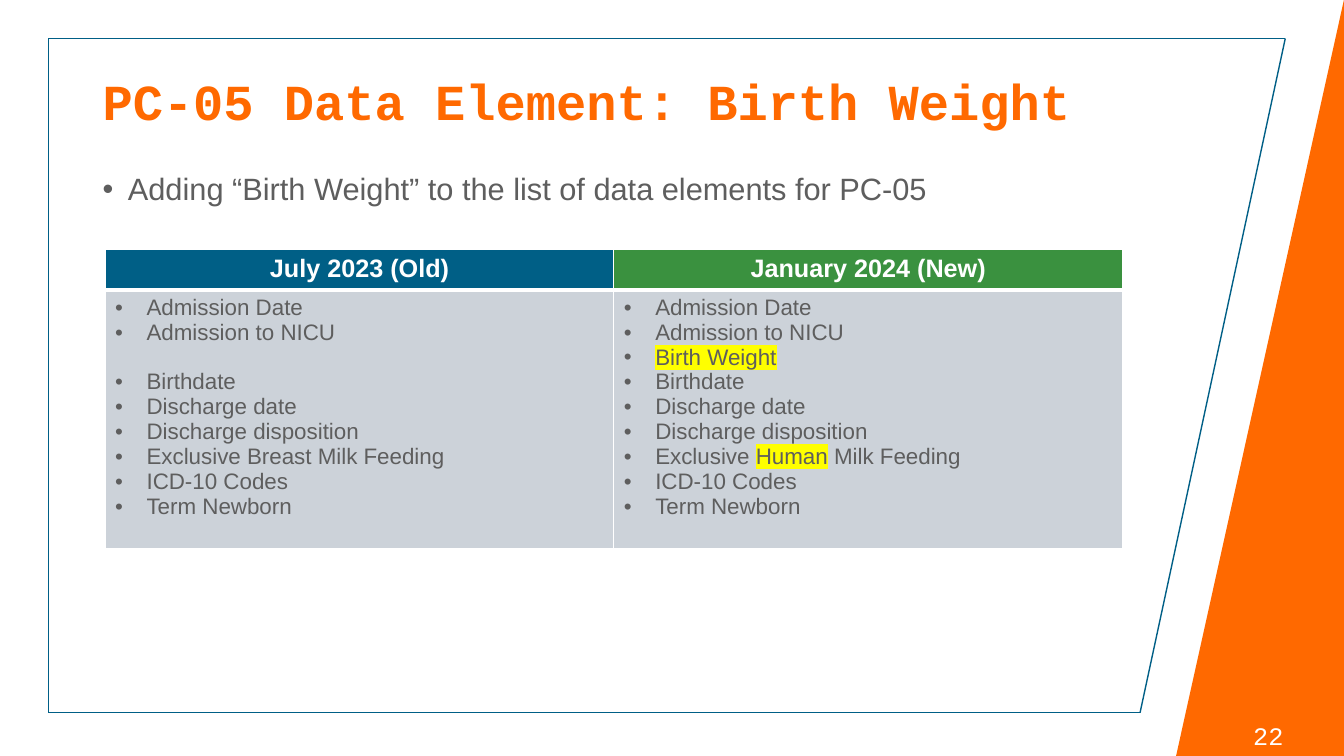
"""Build the slide that compares the PC-05 data elements before and after the change."""
import pptx
import pptx.dml.color
import pptx.enum.shapes
import pptx.enum.text
import pptx.oxml
import pptx.oxml.ns
import pptx.util

Cm = pptx.util.Cm
Pt = pptx.util.Pt
Align = pptx.enum.text.PP_ALIGN
Anchor = pptx.enum.text.MSO_ANCHOR


def rgb(value):
    return pptx.dml.color.RGBColor.from_string(value)


def element(markup):
    declaration = pptx.oxml.ns.nsdecls("a")
    tag, rest = markup.split(">", 1)
    return pptx.oxml.parse_xml(f"{tag} {declaration}>{rest}")


class DataElementSlide:
    orange, blue, green = "FF6900", "005F86", "3A913F"
    grey, pale, white, yellow = "5E5E5E", "CCD2D9", "FFFFFF", "FFFF00"
    sans, mono = "Arial", "Courier New"

    def __init__(self, deck):
        self.slide = deck.slides.add_slide(deck.slide_layouts[1])

    def format_runs(self, paragraph, font, size, color, bold=False):
        for run in paragraph.runs:
            run.font.name = font
            run.font.size = Pt(size)
            run.font.bold = bold
            run.font.color.rgb = rgb(color)

    def bullet(self, paragraph, indent):
        properties = paragraph._p.get_or_add_pPr()
        properties.set("marL", str(Cm(indent)))
        properties.set("indent", str(-Cm(indent)))
        properties.append(element('<a:buFont typeface="Arial"></a:buFont>'))
        properties.append(element('<a:buChar char="•"></a:buChar>'))

    def placeholder(self, holder, text, left, top, width, height, anchor):
        holder.left, holder.top = Cm(left), Cm(top)
        holder.width, holder.height = Cm(width), Cm(height)
        frame = holder.text_frame
        frame.text = text
        frame.vertical_anchor = anchor
        frame.auto_size = pptx.enum.text.MSO_AUTO_SIZE.NONE
        paragraph = frame.paragraphs[0]
        paragraph.alignment = Align.LEFT
        paragraph.line_spacing = 0.9
        paragraph.space_before = Pt(0)
        return paragraph

    def title(self, text):
        heading = self.placeholder(self.slide.shapes.title, text, 2.33, 1.01, 29.21, 3.25, Anchor.MIDDLE)
        self.format_runs(heading, self.mono, 36, self.orange, True)

    def body(self, text):
        summary = self.placeholder(self.slide.placeholders[1], text, 2.33, 4.26, 26.26, 12.52, Anchor.TOP)
        self.bullet(summary, 0.64)
        self.format_runs(summary, self.sans, 22, self.grey)

    def wedge(self, left, top, width, height):
        wedge = self.slide.shapes.add_shape(
            pptx.enum.shapes.MSO_SHAPE.RIGHT_TRIANGLE, Cm(left), Cm(top), Cm(width), Cm(height))
        wedge.shadow.inherit = False
        wedge.fill.solid()
        wedge.fill.fore_color.rgb = rgb(self.orange)
        wedge.line.fill.background()
        wedge._element.spPr.xfrm.set("flipH", "1")

    def frame(self, corners):
        for start, end in zip(corners, corners[1:] + corners[:1]):
            edge = self.slide.shapes.add_connector(
                pptx.enum.shapes.MSO_CONNECTOR.STRAIGHT, *map(Cm, start + end))
            edge.line.color.rgb = rgb(self.blue)
            edge.line.width = Pt(1)
            edge._element.spPr.append(element("<a:effectLst></a:effectLst>"))

    def page_number(self, text, left, top, width, height):
        number = self.slide.shapes.add_textbox(Cm(left), Cm(top), Cm(width), Cm(height))
        number.text_frame.word_wrap = True
        number.text_frame.text = text
        paragraph = number.text_frame.paragraphs[0]
        paragraph.alignment = Align.CENTER
        self.format_runs(paragraph, self.mono, 18, self.white)

    def fill_cell(self, cell, color, bottom):
        cell.fill.solid()
        cell.fill.fore_color.rgb = rgb(color)
        widths = {"lnL": 1, "lnR": 1, "lnT": bottom if color == self.pale else 1, "lnB": bottom}
        if color == self.pale:
            widths["lnT"], widths["lnB"] = 3, 1
        for place, (side, width) in enumerate(widths.items()):
            border = element(
                f'<a:{side} w="{Pt(width)}"><a:solidFill><a:srgbClr val="{self.white}"/>'
                f"</a:solidFill></a:{side}>")
            cell._tc.get_or_add_tcPr().insert(place, border)

    def header_cell(self, cell, text, color):
        self.fill_cell(cell, color, 3)
        cell.text_frame.text = text
        heading = cell.text_frame.paragraphs[0]
        heading.alignment = Align.CENTER
        self.format_runs(heading, self.sans, 18, self.white, True)

    def list_cell(self, cell, entries, gap_before):
        self.fill_cell(cell, self.pale, 1)
        cell.text_frame.text = "\n".join(entries)
        for entry, paragraph in zip(entries, cell.text_frame.paragraphs):
            self.bullet(paragraph, 0.79)
            if entry == gap_before:
                paragraph.space_before = Pt(17.8)
            pieces = entry.split("|")
            paragraph.runs[0].text = pieces[0]
            for piece in pieces[1:]:
                paragraph.add_run().text = piece
            self.format_runs(paragraph, self.sans, 16, self.grey)
            for marked in paragraph.runs[1::2]:
                highlight = element(f'<a:highlight><a:srgbClr val="{self.yellow}"/></a:highlight>')
                marked.font._element.find(pptx.oxml.ns.qn("a:solidFill")).addnext(highlight)
            if not pieces[0]:
                paragraph._p.remove(paragraph.runs[0]._r)
            if not pieces[-1]:
                paragraph._p.remove(paragraph.runs[-1]._r)

    def comparison(self, columns, left, top, width, row_heights):
        table = self.slide.shapes.add_table(
            len(row_heights), len(columns), Cm(left), Cm(top), Cm(width), Cm(sum(row_heights))).table
        for row, height in zip(table.rows, row_heights):
            row.height = Cm(height)
        for index, (heading, color, entries, gap_before) in enumerate(columns):
            self.header_cell(table.cell(0, index), heading, color)
            self.list_cell(table.cell(1, index), entries, gap_before)


def main():
    deck = pptx.Presentation()
    deck.slide_width, deck.slide_height = Cm(33.87), Cm(19.05)
    page = DataElementSlide(deck)
    page.wedge(29.64, 0, 4.23, 19.05)
    page.frame([(1.22, 0.97), (32.39, 0.97), (28.73, 17.96), (1.22, 17.96)])
    page.page_number("22", 31.04, 18.03, 1.85, 1.02)
    page.title("PC-05 Data Element: Birth Weight")
    page.body("Adding “Birth Weight” to the list of data elements for PC-05")

    admission = ["Admission Date", "Admission to NICU"]
    discharge = ["Birthdate", "Discharge date", "Discharge disposition"]
    coding = ["ICD-10 Codes", "Term Newborn"]
    old = admission + discharge + ["Exclusive Breast Milk Feeding"] + coding
    new = admission + ["|Birth Weight|"] + discharge + ["Exclusive |Human| Milk Feeding"] + coding
    page.comparison(
        [("July 2023 (Old)", page.blue, old, "Birthdate"),
         ("January 2024 (New)", page.green, new, None)],
        2.65, 6.28, 25.64, [1.03, 6.52])
    deck.save("out.pptx")


if __name__ == "__main__":
    main()
